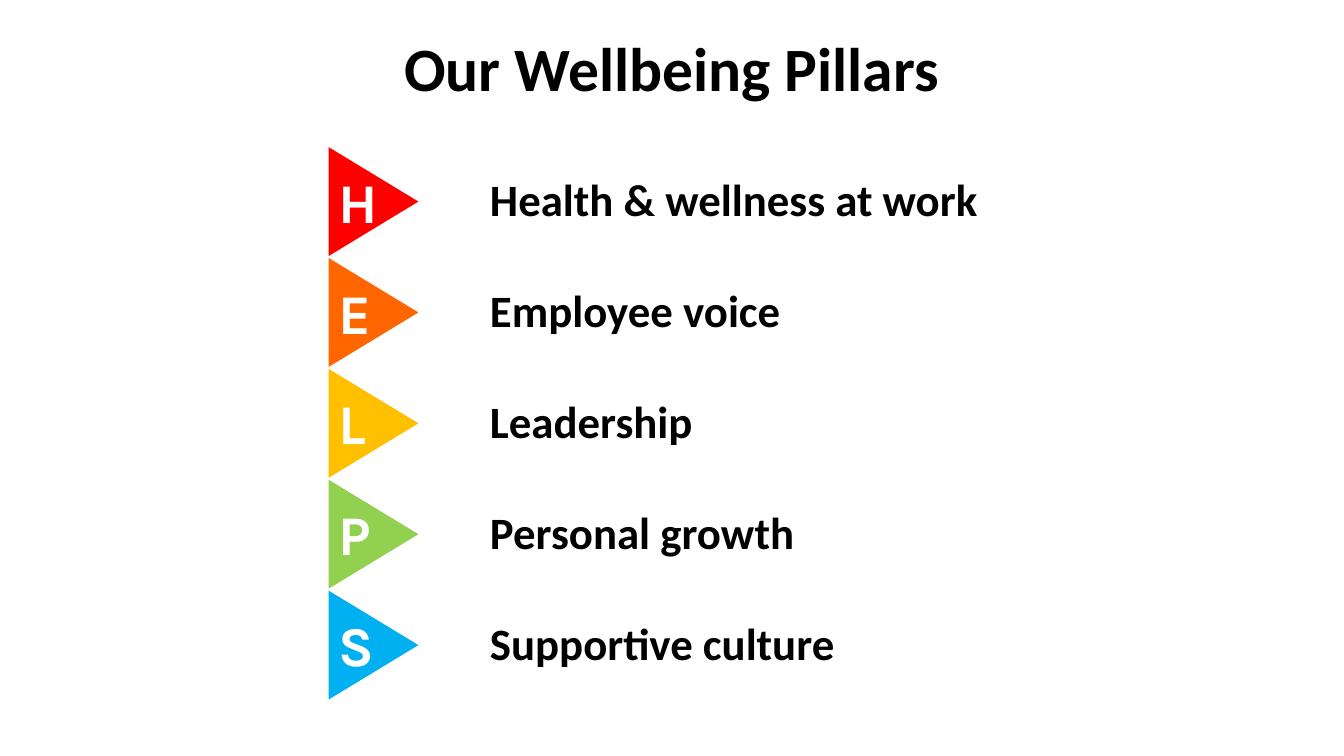
import pptx
import pptx.dml.color
import pptx.enum.shapes
import pptx.enum.text
import pptx.util

Inches = pptx.util.Inches
RGBColor = pptx.dml.color.RGBColor
BLACK = RGBColor(0x00, 0x00, 0x00)
WHITE = RGBColor(0xFF, 0xFF, 0xFF)
RED = RGBColor(0xFF, 0x00, 0x00)
ORANGE = RGBColor(0xFF, 0x66, 0x00)
AMBER = RGBColor(0xFF, 0xC0, 0x00)
GREEN = RGBColor(0x92, 0xD0, 0x50)
BLUE = RGBColor(0x00, 0xB0, 0xF0)

PILLARS = [
    ("H", "Health & wellness at work", RED),
    ("E", "Employee voice", ORANGE),
    ("L", "Leadership", AMBER),
    ("P", "Personal growth", GREEN),
    ("S", "Supportive culture", BLUE),
]
ROW_HEIGHT = 1.1
LETTER_COLUMN = 1.5


def write_text(frame, text, font_name, size, color):
    """Put one bold paragraph in a text frame and return it."""
    frame.text = text
    para = frame.paragraphs[0]
    font = para.runs[0].font
    font.name = font_name
    font.size = pptx.util.Pt(size)
    font.bold = True
    font.color.rgb = color
    return para


def add_title(page, left, top, width, height):
    """Add the centred slide title."""
    box = page.shapes.add_textbox(Inches(left), Inches(top), Inches(width), Inches(height))
    frame = box.text_frame
    frame.word_wrap = True
    frame.vertical_anchor = pptx.enum.text.MSO_ANCHOR.MIDDLE
    para = write_text(frame, "Our Wellbeing Pillars", "Calibri", 44, BLACK)
    para.alignment = pptx.enum.text.PP_ALIGN.CENTER
    para.line_spacing = 0.9


def add_pillar_table(page, left, top, width):
    """Add the plain table that names each pillar in its second column."""
    height = ROW_HEIGHT * len(PILLARS)
    table = page.shapes.add_table(
        len(PILLARS), 2, Inches(left), Inches(top), Inches(width), Inches(height)
    ).table
    table.first_row = False
    table.horz_banding = False
    table.columns[0].width = Inches(LETTER_COLUMN)
    table.columns[1].width = Inches(width - LETTER_COLUMN)
    for row, (_, name, _) in zip(table.rows, PILLARS):
        row.height = Inches(ROW_HEIGHT)
        for cell in row.cells:
            cell.fill.background()
            cell.vertical_anchor = pptx.enum.text.MSO_ANCHOR.MIDDLE
        write_text(row.cells[1].text_frame, name, "Calibri", 32, BLACK)


def add_arrowheads(page, left, top):
    """Add a group of triangles pointing right, one beside each table row."""
    base, depth = 1.08, 0.89
    group = page.shapes.add_group_shape()
    for index, (_, _, color) in enumerate(PILLARS):
        middle = top + ROW_HEIGHT * (index + 0.5)
        triangle = group.shapes.add_shape(
            pptx.enum.shapes.MSO_SHAPE.ISOSCELES_TRIANGLE,
            Inches(left + (depth - base) / 2), Inches(middle - depth / 2),
            Inches(base), Inches(depth),
        )
        triangle.rotation = 90
        triangle.shadow.inherit = False
        triangle.fill.solid()
        triangle.fill.fore_color.rgb = color
        triangle.line.fill.background()


def add_letters(page, left, top):
    """Add the initial of each pillar over its triangle."""
    for index, (letter, _, _) in enumerate(PILLARS):
        box = page.shapes.add_textbox(
            Inches(left), Inches(top + 0.16 + ROW_HEIGHT * index), Inches(0.54), Inches(0.77)
        )
        box.text_frame.word_wrap = True
        write_text(box.text_frame, letter, "Karla", 40, WHITE)


def add_pillars(page, left, top, width):
    """Add the table with its lettered triangles."""
    add_pillar_table(page, left, top, width)
    add_arrowheads(page, left, top)
    add_letters(page, left, top)


def main():
    """Build and save the deck."""
    deck = pptx.Presentation()
    deck.slide_width = Inches(13.33)
    deck.slide_height = Inches(7.5)
    page = deck.slides.add_slide(deck.slide_layouts[6])
    add_pillars(page, 3.26, 1.45, 7.14)
    add_title(page, 0, -0.02, 13.33, 1.45)
    deck.save("out.pptx")


if __name__ == "__main__":
    main()
